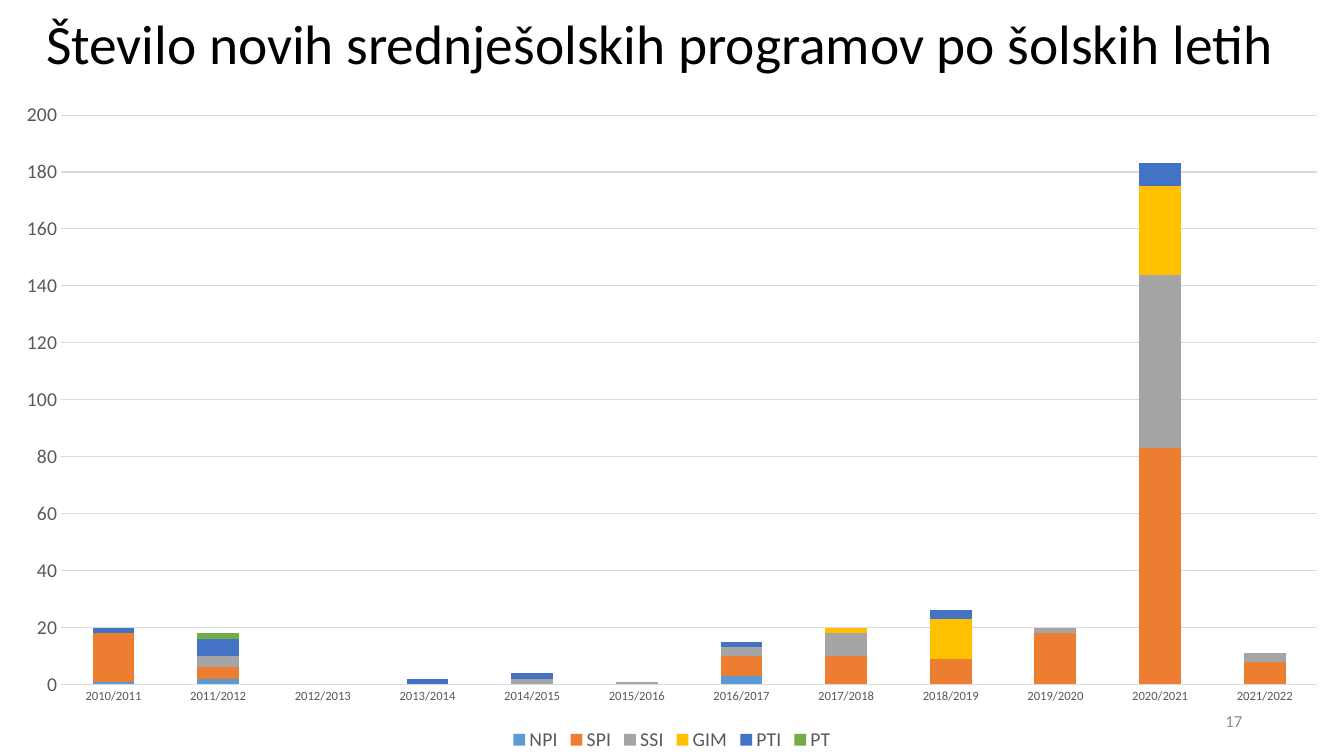
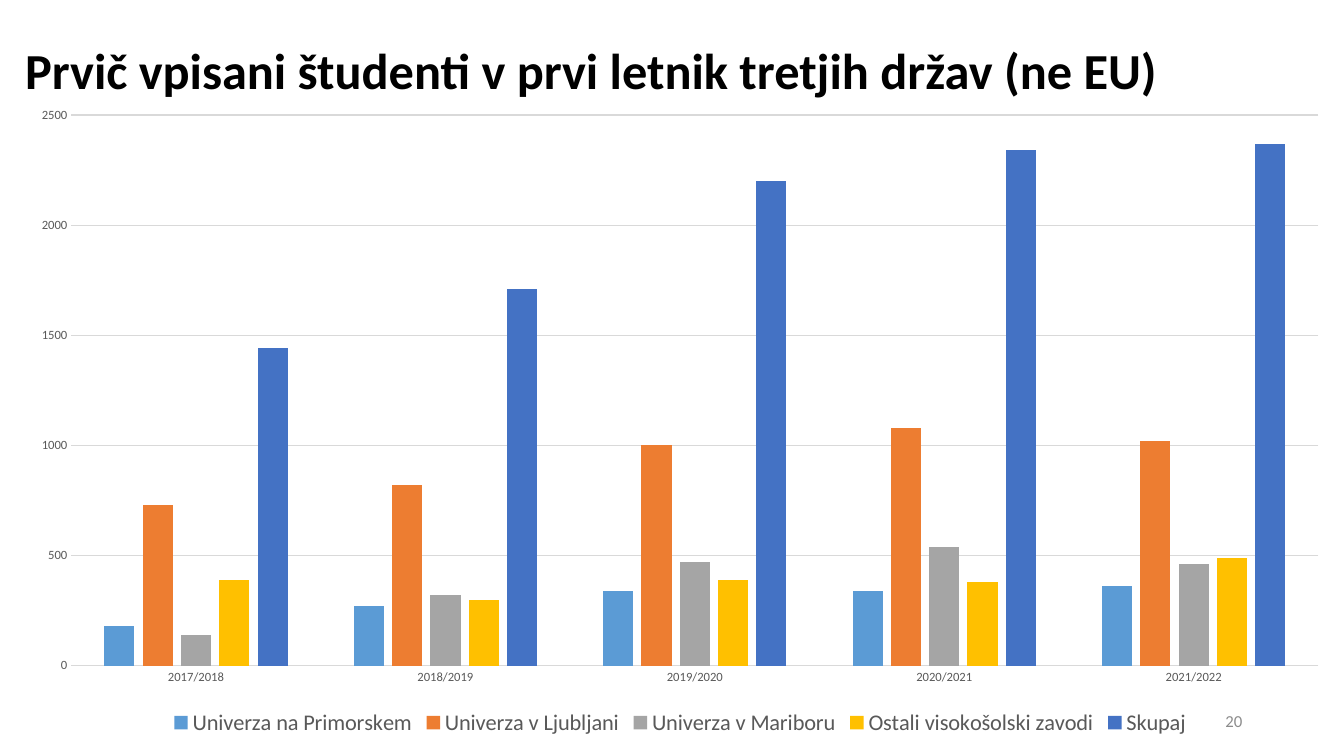
from dataclasses import dataclass

from pptx import Presentation
from pptx.chart.data import CategoryChartData
from pptx.dml.color import RGBColor
from pptx.enum.chart import XL_CHART_TYPE as ChartType
from pptx.enum.chart import XL_LEGEND_POSITION as LegendPosition
from pptx.enum.chart import XL_TICK_MARK as TickMark
from pptx.enum.text import MSO_ANCHOR as Anchor
from pptx.enum.text import PP_ALIGN as Align
from pptx.util import Inches, Pt


@dataclass(frozen=True)
class Theme:
    """Colours, font and type sizes shared by the slides."""
    font: str = "Calibri"
    title_color: str = "000000"
    label_color: str = "595959"
    number_color: str = "8C8C8C"
    rule_color: str = "D9D9D9"
    series_colors: tuple = ("5B9BD5", "ED7D31", "A5A5A5", "FFC000", "4472C4", "70AD47")
    number_size: float = 12
    chart_size: float = 10
    category_size: float = 9
    rule_width: float = 0.75


class Deck:
    """Holds the presentation, its theme and the current slide."""

    def __init__(self, theme):
        self.theme = theme
        self.deck = Presentation()
        self.deck.slide_width = Inches(13.33)
        self.deck.slide_height = Inches(7.5)
        self.page = None

    def add_page(self, number):
        """Start a blank slide with its page number."""
        self.page = self.deck.slides.add_slide(self.deck.slide_layouts[6])
        self.number = number

    def style(self, font, size, color):
        """Set face, size and colour of a font."""
        font.name = self.theme.font
        font.size = Pt(size)
        font.color.rgb = RGBColor.from_string(color)

    def text(self, place, words, size, color, bold=False, align=Align.LEFT, spacing=1.0):
        """Add one line of vertically centred text."""
        box = self.page.shapes.add_textbox(*map(Inches, place))
        frame = box.text_frame
        frame.word_wrap = True
        frame.vertical_anchor = Anchor.MIDDLE
        para = frame.paragraphs[0]
        para.alignment = align
        para.line_spacing = spacing
        span = para.add_run()
        span.text = words
        span.font.bold = bold
        self.style(span.font, size, color)

    def title(self, place, words, size, bold=False):
        """Add the slide title and the page number."""
        self.text(place, words, size, self.theme.title_color, bold, spacing=0.9)
        self.text((9.42, 6.95, 3, 0.4), str(self.number), self.theme.number_size,
                  self.theme.number_color, align=Align.RIGHT)

    def rule(self, line):
        """Draw a line as a thin grey rule."""
        line.color.rgb = RGBColor.from_string(self.theme.rule_color)
        line.width = Pt(self.theme.rule_width)

    def columns(self, place, kind, categories, series, gap, overlap, top, step,
                value_size, legend_size):
        """Add a column chart with a legend below."""
        theme = self.theme
        data = CategoryChartData()
        data.categories = categories
        for name, values in series.items():
            data.add_series(name, values)
        chart = self.page.shapes.add_chart(kind, *map(Inches, place), data).chart
        self.style(chart.font, theme.chart_size, theme.title_color)
        chart.has_title = False
        chart.has_legend = True
        chart.legend.position = LegendPosition.BOTTOM
        chart.legend.include_in_layout = False
        self.style(chart.legend.font, legend_size, theme.label_color)

        plot = chart.plots[0]
        plot.gap_width = gap
        plot.overlap = overlap
        plot.vary_by_categories = False
        for bars, color in zip(plot.series, theme.series_colors):
            bars.format.fill.solid()
            bars.format.fill.fore_color.rgb = RGBColor.from_string(color)
            bars.invert_if_negative = False

        category_axis, value_axis = chart.category_axis, chart.value_axis
        for axis, size in ((category_axis, theme.category_size), (value_axis, value_size)):
            axis.major_tick_mark = axis.minor_tick_mark = TickMark.NONE
            self.style(axis.tick_labels.font, size, theme.label_color)
        self.rule(category_axis.format.line)
        value_axis.format.line.fill.background()
        value_axis.has_major_gridlines = True
        self.rule(value_axis.major_gridlines.format.line)
        value_axis.minimum_scale = 0
        value_axis.maximum_scale = top
        value_axis.major_unit = step

    def save(self):
        """Write the presentation."""
        self.deck.save("out.pptx")


def school_years(first, last):
    """List school years such as 2010/2011."""
    return [f"{year}/{year + 1}" for year in range(first, last + 1)]


def add_programmes(deck):
    """Build the slide on new secondary school programmes."""
    years = school_years(2010, 2021)
    counts = {
        "NPI": {2010: 1, 2011: 2, 2016: 3},
        "SPI": {2010: 17, 2011: 4, 2016: 7, 2017: 10, 2018: 9, 2019: 18, 2020: 83, 2021: 8},
        "SSI": {2011: 4, 2014: 2, 2015: 1, 2016: 3, 2017: 8, 2019: 2, 2020: 61, 2021: 3},
        "GIM": {2017: 2, 2018: 14, 2020: 31},
        "PTI": {2010: 2, 2011: 6, 2013: 2, 2014: 2, 2016: 2, 2018: 3, 2020: 8},
        "PT": {2011: 2},
    }
    series = {name: [found.get(year) for year in range(2010, 2022)]
              for name, found in counts.items()}
    deck.add_page(17)
    deck.title((0.36, 0.1, 12.47, 0.72),
               "Število novih srednješolskih programov po šolskih letih", 39.6)
    deck.columns((0, 0.89, 13.33, 6.61), ChartType.COLUMN_STACKED, years, series,
                 gap=150, overlap=100, top=200, step=20, value_size=14, legend_size=14)


def add_students(deck):
    """Build the slide on first-year students from third countries."""
    series = {
        "Univerza na Primorskem": (180, 270, 340, 340, 360),
        "Univerza v Ljubljani": (730, 820, 1000, 1080, 1020),
        "Univerza v Mariboru": (140, 320, 470, 540, 460),
        "Ostali visokošolski zavodi": (390, 300, 390, 380, 490),
        "Skupaj": (1440, 1710, 2200, 2340, 2370),
    }
    deck.add_page(20)
    deck.title((0.15, 0, 12.85, 1.45),
               "Prvič vpisani študenti v prvi letnik tretjih držav (ne EU)", 36, bold=True)
    deck.columns((0.15, 0.94, 13.19, 6.41), ChartType.COLUMN_CLUSTERED,
                 school_years(2017, 2021), series,
                 gap=219, overlap=-27, top=2500, step=500, value_size=9, legend_size=16)


def main():
    """Build and save both slides."""
    deck = Deck(Theme())
    add_programmes(deck)
    add_students(deck)
    deck.save()


if __name__ == "__main__":
    main()
